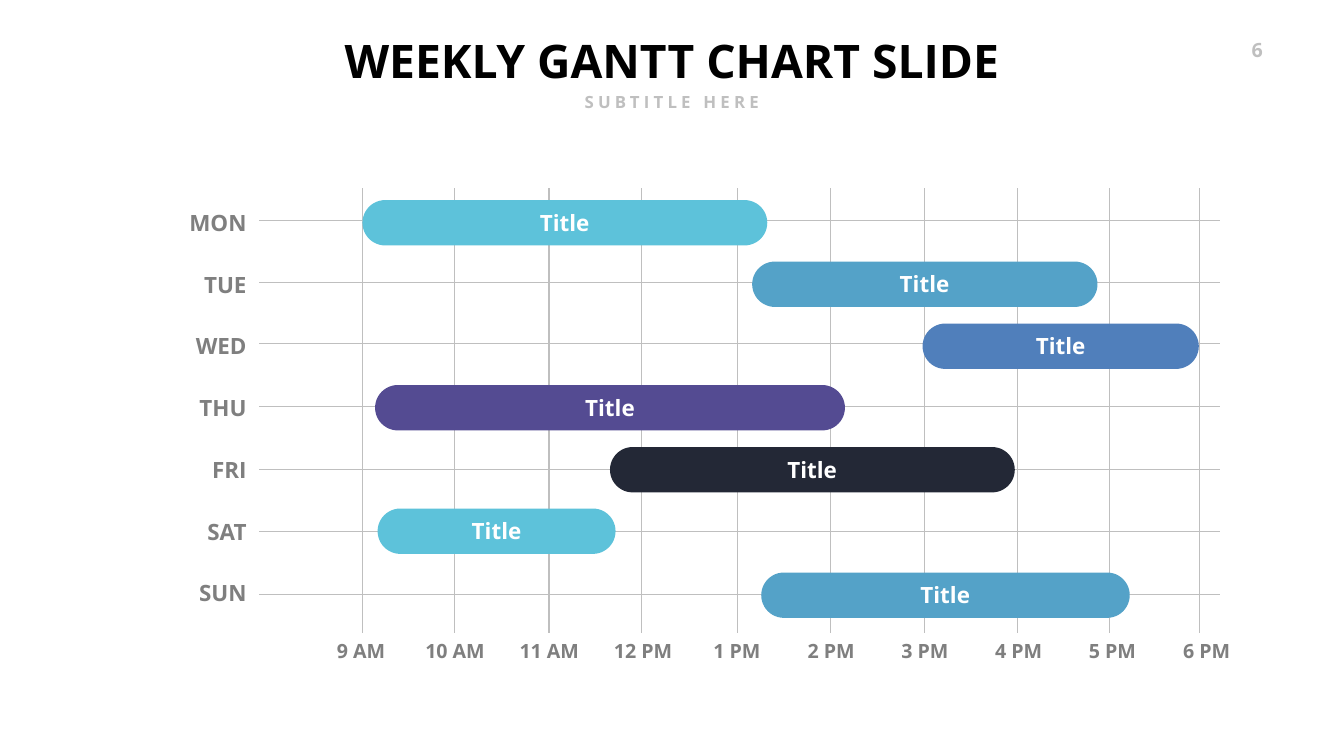
from dataclasses import dataclass
from typing import NamedTuple

from lxml import etree
from pptx import Presentation, util as u
from pptx.dml.color import RGBColor
from pptx.enum import shapes, text
from pptx.oxml.ns import qn

PX = u.Inches(1) // 100


@dataclass(frozen=True)
class Theme:
    font: str = "Open Sans"
    title: str = "000000"
    muted: str = "BFBFBF"
    label: str = "7F7F7F"
    on_bar: str = "FFFFFF"
    cyan: str = "5DC2DA"
    sky: str = "54A2C8"
    blue: str = "507FBB"
    violet: str = "544B92"
    navy: str = "232836"
    title_pt: int = 66
    subtitle_pt: int = 24
    axis_pt: int = 28
    body_pt: int = 32
    line_pt: float = 1.5


class Box(NamedTuple):
    x: int
    y: int
    w: int
    h: int


class Hour(NamedTuple):
    name: str
    line_x: int
    label_w: int


class Day(NamedTuple):
    name: str
    line_y: int
    label_w: int
    bar_x: int
    bar_y: int
    bar_w: int
    color: str


THEME = Theme()
ROW_PITCH = 122.4
HOUR_PITCH = 186.3
FIRST_HOUR_X = 716
GRID_LEFT, GRID_RIGHT, GRID_TOP, GRID_BOTTOM = 514, 2420, 374, 1256
DAY_LABEL_RIGHT, DAY_LABEL_TOP = 499, 410
BAR_H, BAR_TITLE_W, BAR_TITLE_DY = 90, 122, 13
BODY_H, AXIS_H = 64, 57

HOURS = [
    Hour("9 AM", 719, 116),
    Hour("10 AM", 902, 139),
    Hour("11 AM", 1089, 139),
    Hour("12 PM", 1273, 137),
    Hour("1 PM", 1463, 115),
    Hour("2 PM", 1647, 115),
    Hour("3 PM", 1834, 115),
    Hour("4 PM", 2018, 115),
    Hour("5 PM", 2201, 115),
    Hour("6 PM", 2379, 115),
]

DAYS = [
    Day("MON", 437, 135, 719, 397, 803, THEME.cyan),
    Day("TUE", 561, 105, 1492, 519, 685, THEME.sky),
    Day("WED", 682, 122, 1830, 642, 548, THEME.blue),
    Day("THU", 806, 118, 744, 764, 932, THEME.violet),
    Day("FRI", 932, 89, 1210, 887, 803, THEME.navy),
    Day("SAT", 1055, 99, 749, 1009, 472, THEME.cyan),
    Day("SUN", 1179, 115, 1510, 1136, 731, THEME.sky),
]


def emu(*values: int) -> list[int]:
    return [v * PX for v in values]


def add_text(s, box: Box, content: str, *, size: int, color: str,
             align=text.PP_ALIGN.CENTER, anchor=text.MSO_ANCHOR.TOP,
             spacing: int = 0) -> None:
    tf = s.shapes.add_textbox(*emu(*box)).text_frame
    tf.word_wrap = False
    tf.auto_size = text.MSO_AUTO_SIZE.SHAPE_TO_FIT_TEXT
    tf.vertical_anchor = anchor
    p = tf.paragraphs[0]
    p.alignment = align
    r = p.add_run()
    r.text = content
    r.font.name = THEME.font
    r.font.size = u.Pt(size)
    r.font.bold = True
    r.font.color.rgb = RGBColor.from_string(color)
    if spacing:
        r.font._element.set("spc", str(spacing * 100))


def add_grid_line(s, x1: int, y1: int, x2: int, y2: int) -> None:
    line = s.shapes.add_connector(shapes.MSO_CONNECTOR.STRAIGHT,
                                  *emu(x1, y1, x2, y2))
    line.line.color.rgb = RGBColor.from_string(THEME.muted)
    line.line.width = u.Pt(THEME.line_pt)
    etree.SubElement(line._element.spPr, qn("a:effectLst"))


def add_hour(s, index: int, hour: Hour) -> None:
    add_grid_line(s, hour.line_x, GRID_TOP, hour.line_x, GRID_BOTTOM)
    center = FIRST_HOUR_X + round(index * HOUR_PITCH)
    add_text(s, Box(center - hour.label_w // 2, 1263, hour.label_w, AXIS_H),
             hour.name, size=THEME.axis_pt, color=THEME.label)


def add_day(s, index: int, day: Day) -> None:
    add_grid_line(s, GRID_RIGHT, day.line_y, GRID_LEFT, day.line_y)
    top = DAY_LABEL_TOP + int(index * ROW_PITCH)
    add_text(s, Box(DAY_LABEL_RIGHT - day.label_w, top, day.label_w, BODY_H),
             day.name, size=THEME.body_pt, color=THEME.label,
             align=text.PP_ALIGN.RIGHT, anchor=text.MSO_ANCHOR.MIDDLE)


def add_bar(s, day: Day) -> None:
    sp = s.shapes.add_shape(shapes.MSO_SHAPE.ROUNDED_RECTANGLE,
                            *emu(day.bar_x, day.bar_y, day.bar_w, BAR_H))
    sp.adjustments[0] = 0.5
    sp.shadow.inherit = False
    sp.fill.solid()
    sp.fill.fore_color.rgb = RGBColor.from_string(day.color)
    sp.line.fill.background()
    title_x = day.bar_x + (day.bar_w - BAR_TITLE_W) // 2
    add_text(s, Box(title_x, day.bar_y + BAR_TITLE_DY, BAR_TITLE_W, BODY_H),
             "Title", size=THEME.body_pt, color=THEME.on_bar)


def main() -> None:
    prs = Presentation()
    prs.slide_width, prs.slide_height = emu(2666, 1500)
    s = prs.slides.add_slide(prs.slide_layouts[6])
    add_text(s, Box(2428, 70, 87, 57), "6", size=THEME.axis_pt,
             color=THEME.muted, align=text.PP_ALIGN.RIGHT, spacing=3)
    add_text(s, Box(667, 59, 1332, 121), "WEEKLY GANTT CHART SLIDE",
             size=THEME.title_pt, color=THEME.title)
    add_text(s, Box(1139, 177, 387, 50), "SUBTITLE HERE",
             size=THEME.subtitle_pt, color=THEME.muted, spacing=6)
    for i, hour in enumerate(HOURS):
        add_hour(s, i, hour)
    for i, day in enumerate(DAYS):
        add_day(s, i, day)
    for day in DAYS:
        add_bar(s, day)
    prs.save("out.pptx")


if __name__ == "__main__":
    main()
